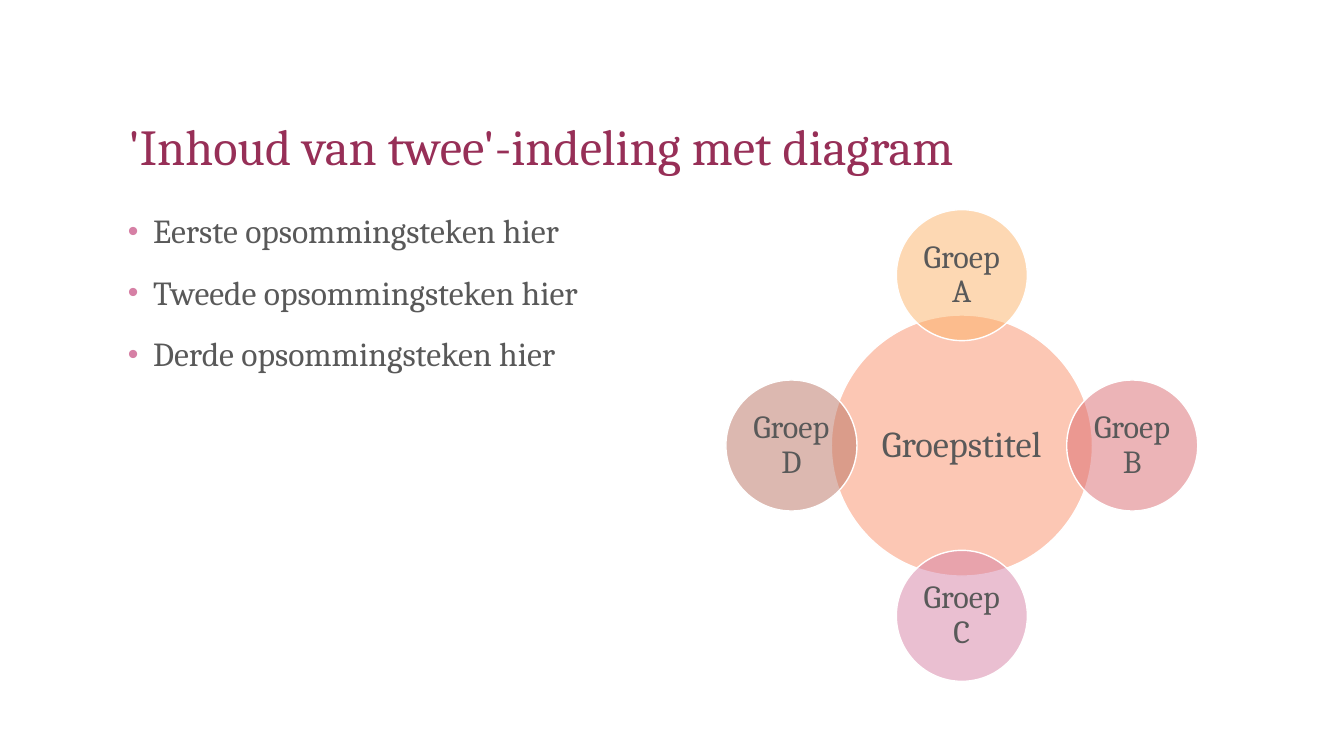
from dataclasses import dataclass
from math import cos, radians, sin

from lxml.etree import SubElement
from pptx import Presentation
from pptx.dml.color import RGBColor
from pptx.enum.shapes import MSO_SHAPE
from pptx.enum.text import MSO_ANCHOR, MSO_AUTO_SIZE, PP_ALIGN
from pptx.oxml.ns import qn
from pptx.slide import Slide
from pptx.text.text import _Paragraph as Paragraph
from pptx.util import Inches, Pt

FONT = "Cambria"
PLUM = RGBColor(0x97, 0x2F, 0x57)
GRAY = RGBColor(0x59, 0x59, 0x59)
WHITE = RGBColor(0xFF, 0xFF, 0xFF)
PINK = RGBColor(0xD6, 0x80, 0xA5)
CORAL = RGBColor(0xFA, 0x90, 0x6A)
ORANGE = RGBColor(0xFC, 0xB2, 0x68)
RED = RGBColor(0xDB, 0x6B, 0x70)
BROWN = RGBColor(0xBA, 0x73, 0x62)

CENTER_X, CENTER_Y = 9.54, 4.42
ORBIT = 1.69
HUB_DIAMETER, GROUP_DIAMETER = 2.59, 1.3
BULLETS = [
    "Eerste opsommingsteken hier",
    "Tweede opsommingsteken hier",
    "Derde opsommingsteken hier",
]


@dataclass(frozen=True)
class Circle:
    text: str
    color: RGBColor
    x: float
    y: float
    diameter: float
    font_size: float
    inset: float


def style_paragraph(paragraph: Paragraph, size: float, color: RGBColor) -> None:
    paragraph.line_spacing = 0.9
    paragraph.font.name = FONT
    paragraph.font.size = Pt(size)
    paragraph.font.color.rgb = color


def add_bullet(paragraph: Paragraph) -> None:
    properties = paragraph._p.get_or_add_pPr()
    properties.set("marL", str(Inches(0.25)))
    properties.set("indent", str(Inches(-0.25)))
    bullet_color = SubElement(properties, qn("a:buClr"))
    SubElement(bullet_color, qn("a:srgbClr"), val=str(PINK))
    SubElement(properties, qn("a:buSzPct"), val="90000")
    SubElement(properties, qn("a:buFont"), typeface="Arial")
    SubElement(properties, qn("a:buChar"), char="•")


def add_title(slide: Slide) -> None:
    title = slide.shapes.title
    title.left, title.top = Inches(1.17), Inches(0.5)
    title.width, title.height = Inches(11), Inches(1.3)
    frame = title.text_frame
    frame.text = "'Inhoud van twee'-indeling met diagram"
    frame.auto_size = MSO_AUTO_SIZE.NONE
    frame.vertical_anchor = MSO_ANCHOR.BOTTOM
    paragraph = frame.paragraphs[0]
    paragraph.alignment = PP_ALIGN.LEFT
    style_paragraph(paragraph, 36, PLUM)


def add_bullet_list(slide: Slide) -> None:
    box = slide.shapes.add_textbox(Inches(1.17), Inches(2.08), Inches(5.25), Inches(4.67))
    frame = box.text_frame
    frame.word_wrap = True
    frame.text = "\n".join(BULLETS)
    for index, paragraph in enumerate(frame.paragraphs):
        add_bullet(paragraph)
        style_paragraph(paragraph, 24, GRAY)
        paragraph.space_before = Pt(18 if index else 0)


def add_circle(slide: Slide, circle: Circle) -> None:
    diameter = Inches(circle.diameter)
    shape = slide.shapes.add_shape(
        MSO_SHAPE.OVAL,
        Inches(circle.x - circle.diameter / 2),
        Inches(circle.y - circle.diameter / 2),
        diameter,
        diameter,
    )
    shape.shadow.inherit = False
    shape.fill.solid()
    shape.fill.fore_color.rgb = circle.color
    color_element = shape._element.spPr.find(qn("a:solidFill")).find(qn("a:srgbClr"))
    SubElement(color_element, qn("a:alpha"), val="50000")
    shape.line.color.rgb = WHITE
    shape.line.width = Pt(1)
    frame = shape.text_frame
    frame.word_wrap = True
    frame.vertical_anchor = MSO_ANCHOR.MIDDLE
    frame.margin_left = frame.margin_right = Inches(circle.inset)
    frame.margin_top = frame.margin_bottom = Inches(circle.inset)
    frame.text = circle.text
    paragraph = frame.paragraphs[0]
    paragraph.alignment = PP_ALIGN.CENTER
    style_paragraph(paragraph, circle.font_size, GRAY)


def add_radial_diagram(slide: Slide) -> None:
    """Draw the hub with its groups spaced evenly clockwise from the top."""
    add_circle(slide, Circle("Groepstitel", CORAL, CENTER_X, CENTER_Y, HUB_DIAMETER, 26, 0.04))
    groups = {"A": ORANGE, "B": RED, "C": PINK, "D": BROWN}
    for index, (letter, color) in enumerate(groups.items()):
        angle = radians(index * 360 / len(groups))
        x = CENTER_X + ORBIT * sin(angle)
        y = CENTER_Y - ORBIT * cos(angle)
        add_circle(slide, Circle(f"Groep {letter}", color, x, y, GROUP_DIAMETER, 23, 0.03))


def main() -> None:
    presentation = Presentation()
    presentation.slide_width = Inches(13.33)
    presentation.slide_height = Inches(7.5)
    slide = presentation.slides.add_slide(presentation.slide_layouts.get_by_name("Title Only"))
    add_title(slide)
    add_bullet_list(slide)
    add_radial_diagram(slide)
    presentation.save("out.pptx")


if __name__ == "__main__":
    main()
